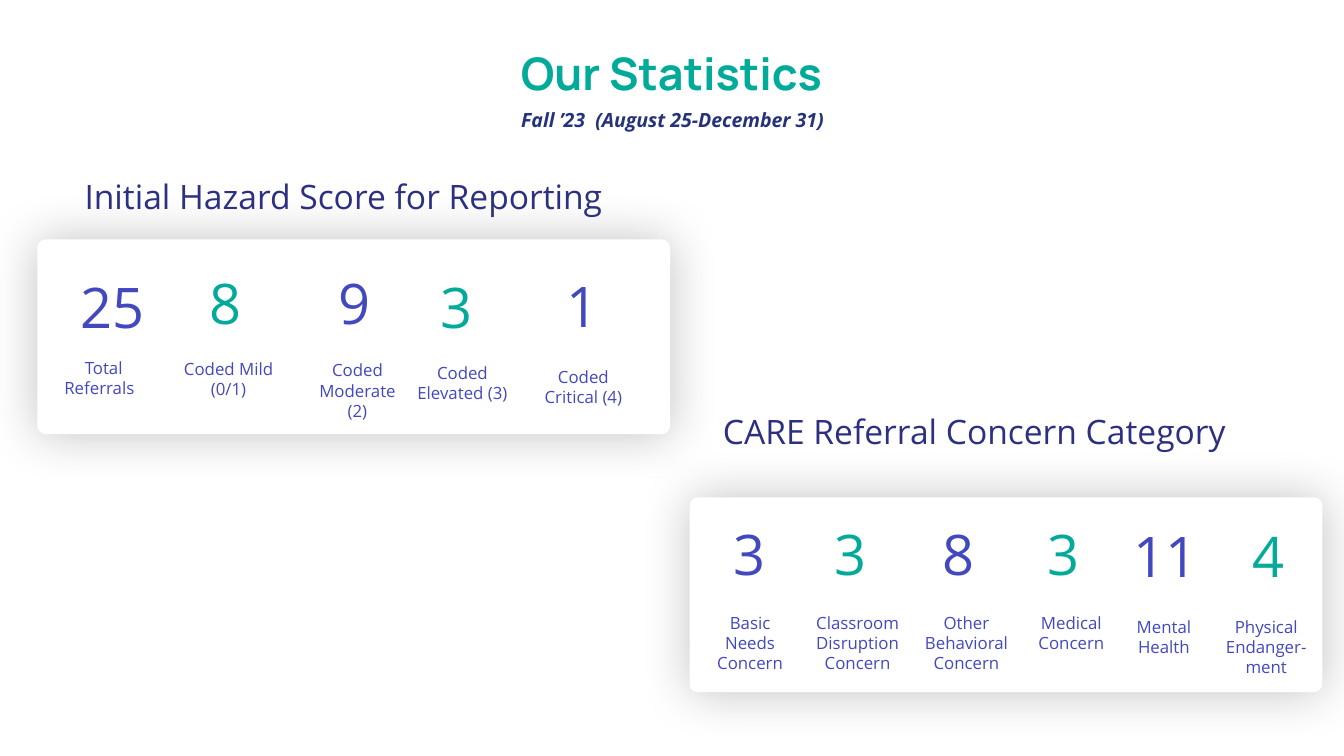
from lxml import etree
from pptx import Presentation
from pptx.dml.color import RGBColor
from pptx.enum.shapes import MSO_SHAPE
from pptx.enum.text import MSO_ANCHOR, MSO_AUTO_SIZE, PP_ALIGN
from pptx.oxml.ns import qn
from pptx.util import Pt

ROUNDED = MSO_SHAPE.ROUNDED_RECTANGLE
TOP = MSO_ANCHOR.TOP
GROW = MSO_AUTO_SIZE.SHAPE_TO_FIT_TEXT
LEFT, CENTER = PP_ALIGN.LEFT, PP_ALIGN.CENTER

WHITE = RGBColor(0xFF, 0xFF, 0xFF)
TEAL = RGBColor(0x01, 0xAA, 0x99)
INDIGO = RGBColor(0x42, 0x48, 0xBE)
NAVY = RGBColor(0x26, 0x33, 0x7B)
HEADING_BLUE = RGBColor(0x2C, 0x30, 0x80)

TITLE_FONT, BODY_FONT = "Manrope", "Open Sans"
CARD_WIDTH, CARD_HEIGHT = 339, 104.4
NUMBER_WIDTH, NUMBER_HEIGHT = 90, 43.9
LABEL_WIDTH = 63.4
LABEL_HEIGHTS = {2: 28.8, 3: 40.2}

# Number, its left and top; label, its left, top and line count
SCORES = [
    ("25", 15.1, 142.6, "Total Referrals  ", 23.8, 187.9, 2),
    ("8 ", 79.9, 140.4, "Coded Mild (0/1)", 90.7, 188.6, 2),
    ("9", 144.7, 140.4, "Coded Moderate (2)", 159.8, 189.4, 3),
    ("3", 199.4, 142.6, "Coded Elevated (3)", 216, 190.8, 2),
    ("1", 267.1, 141.8, "Coded Critical (4)", 280.8, 193, 2),
]
CONCERNS = [
    ("3", 356.4, 275, "Basic Needs Concern", 370.1, 324.7, 3),
    ("3 ", 414.7, 275, "Classroom Disruption Concern", 427.7, 324.7, 3),
    ("8 ", 472.3, 275, "Other Behavioral Concern", 486, 324.7, 3),
    ("3 ", 528.5, 275, "Medical Concern", 542.2, 324.7, 2),
    ("11 ", 583.2, 275.8, "Mental Health", 591.8, 326.9, 2),
    ("4 ", 638.6, 275.8, "Physical Endanger-ment", 646.6, 326.9, 3),
]


def fill_text(shape, text, size, color, font=BODY_FONT, align=CENTER, bold=False, italic=False):
    frame = shape.text_frame
    frame.word_wrap = True
    frame.auto_size = GROW
    frame.vertical_anchor = TOP
    paragraph = frame.paragraphs[0]
    paragraph.alignment = align
    run = paragraph.add_run()
    run.text = text
    run.font.name = font
    run.font.size = Pt(size)
    run.font.bold = bold
    run.font.italic = italic
    run.font.color.rgb = color
    return paragraph


def add_title(slide, text):
    title = slide.shapes.title
    title.left, title.top, title.width, title.height = Pt(211), Pt(20.9), Pt(297.4), Pt(36)
    fill_text(title, text, 24, TEAL, font=TITLE_FONT, bold=True)


def add_text(slide, box, text, size, color, **style):
    shape = slide.shapes.add_textbox(*(Pt(length) for length in box))
    return fill_text(shape, text, size, color, **style)


def add_glow_shadow(shape):
    """Give the shape a soft black shadow that spreads evenly on all sides."""
    shape.shadow.inherit = False
    effects = shape._element.spPr.find(qn("a:effectLst"))
    shadow = etree.SubElement(effects, qn("a:outerShdw"), blurRad=str(Pt(27)),
                              dist="0", algn="ctr", rotWithShape="0")
    color = etree.SubElement(shadow, qn("a:srgbClr"), val="000000")
    etree.SubElement(color, qn("a:alpha"), val="23000")


def add_card(slide, left, top):
    card = slide.shapes.add_shape(ROUNDED, Pt(left), Pt(top), Pt(CARD_WIDTH), Pt(CARD_HEIGHT))
    card.adjustments[0] = 0.043
    card.fill.solid()
    card.fill.fore_color.rgb = WHITE
    card.line.fill.background()
    add_glow_shadow(card)


def add_heading(slide, left, top, text):
    add_text(slide, (left, top, 304.6, 28.8), text, 18, HEADING_BLUE, align=LEFT)


def add_statistics(slide, statistics):
    """Add numbers in alternating colours, each with its label below."""
    for index, statistic in enumerate(statistics):
        number, number_left, number_top, label, label_left, label_top, lines = statistic
        color = TEAL if index % 2 else INDIGO
        add_text(slide, (number_left, number_top, NUMBER_WIDTH, NUMBER_HEIGHT), number, 30, color)
        add_text(slide, (label_left, label_top, LABEL_WIDTH, LABEL_HEIGHTS[lines]),
                 label, 9, INDIGO)


def main():
    presentation = Presentation()
    presentation.slide_width, presentation.slide_height = Pt(720), Pt(405)
    slide = presentation.slides.add_slide(presentation.slide_layouts[5])

    add_title(slide, "Our Statistics")
    subtitle = add_text(slide, (270.7, 48.2, 179.3, 24.5), "Fall ’23  (August 25-December 31)",
                        10.5, NAVY, bold=True, italic=True)
    subtitle.line_spacing = 1.5

    add_card(slide, 20, 128.2)
    add_statistics(slide, SCORES)
    add_heading(slide, 38.2, 90.7, "Initial Hazard Score for Reporting")

    add_card(slide, 369.4, 266.4)
    add_heading(slide, 380.2, 216.7, "CARE Referral Concern Category")
    add_statistics(slide, CONCERNS)

    presentation.save("out.pptx")


if __name__ == "__main__":
    main()
